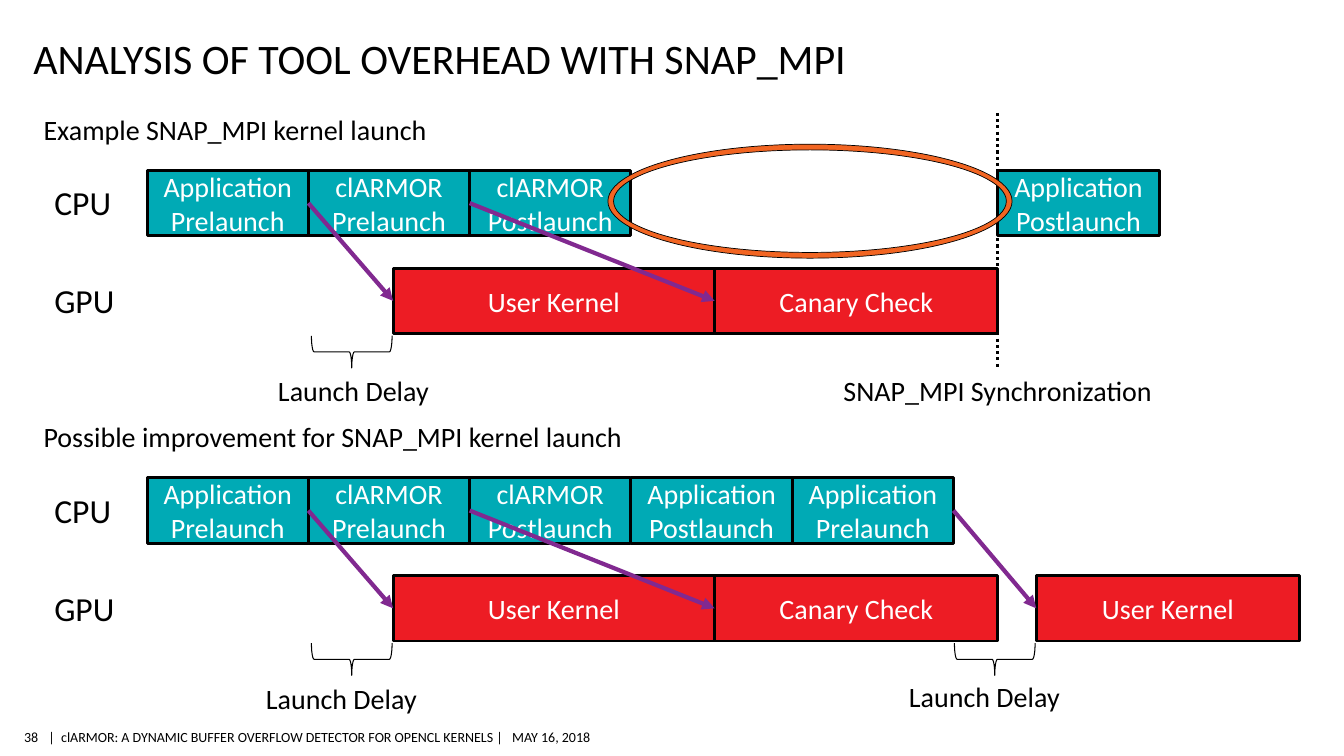
from lxml import etree
from pptx import Presentation
from pptx.dml.color import RGBColor
from pptx.enum import dml, shapes, text
from pptx.oxml import ns
from pptx.util import Pt

TEAL, RED, BLACK, WHITE = "00AAB5", "ED1C24", "000000", "FFFFFF"
PURPLE, ORANGE = "812990", "F26522"
LEFT, STEP, HIGH = 105.1, 115.2, 46.8  # CPU row start, box width, box height
DROP = 69.84  # from CPU row to GPU row
SYNC = 712.8
KERNELS = [("User Kernel", 280.8, 229.7), ("Canary Check", 510.5, 202.3)]
PRE, POST = "Application Prelaunch", "Application Postlaunch"
START = [PRE, "clARMOR Prelaunch", "clARMOR\nPostlaunch"]


def color(code):
    return RGBColor.from_string(code)


def put(obj, **vals):
    for name, val in vals.items():
        setattr(obj, name, val)


def write(frame, words, size, code=BLACK, align=text.PP_ALIGN.LEFT, after=0):
    frame.text = words
    for par in frame.paragraphs:
        put(par, alignment=align, space_after=Pt(after))
        put(par.font, name="Calibri", size=Pt(size))
        par.font.color.rgb = color(code)


def label(slide, words, x, y, w, h=31.7, size=20):
    frame = slide.shapes.add_textbox(Pt(x), Pt(y), Pt(w), Pt(h)).text_frame
    put(frame, word_wrap=True, auto_size=text.MSO_AUTO_SIZE.SHAPE_TO_FIT_TEXT)
    write(frame, words, size, after=6)


def note(slide, words, x, w, align):
    frame = slide.shapes.add_textbox(Pt(x), Pt(517), Pt(w), Pt(18.7)).text_frame
    put(frame, word_wrap=False, margin_left=0, margin_right=0,
        margin_top=Pt(2.9), margin_bottom=Pt(2.9),
        vertical_anchor=text.MSO_ANCHOR.MIDDLE)
    write(frame, words, 10, align=align)


def form(slide, kind, x, y, w, h, fill, line):
    item = slide.shapes.add_shape(kind, Pt(x), Pt(y), Pt(w), Pt(h))
    item.shadow.inherit = False
    if fill:
        item.fill.solid()
        item.fill.fore_color.rgb = color(fill)
    else:
        item.fill.background()
    item.line.color.rgb = color(BLACK)
    item.line.width = Pt(line)
    return item


def box(slide, words, x, y, w, fill):
    item = form(slide, shapes.MSO_SHAPE.RECTANGLE, x, y, w, HIGH, fill, 2)
    item.text_frame.vertical_anchor = text.MSO_ANCHOR.MIDDLE
    write(item.text_frame, words, 20, WHITE, text.PP_ALIGN.CENTER)
    return item


def brace(slide, mid, y):
    # Turned a quarter so that the tip points down
    item = form(slide, shapes.MSO_SHAPE.LEFT_BRACE, mid - 11.5, y - 28.8,
                23, 57.6, None, 0.75)
    item.rotation = 270


def rule(slide, x, y, end, code, width):
    item = slide.shapes.add_connector(shapes.MSO_CONNECTOR.STRAIGHT,
                                      Pt(x), Pt(y), Pt(x), Pt(end))
    item.line.color.rgb = color(code)
    item.line.width = Pt(width)
    etree.SubElement(item.line._get_or_add_ln().getparent(),
                     ns.qn("a:effectLst"))
    return item


def arrow(slide, source, goal):
    item = rule(slide, 0, 0, 0, PURPLE, 3)
    item.begin_connect(source, 3)
    item.end_connect(goal, 1)
    etree.SubElement(item.line._get_or_add_ln(), ns.qn("a:tailEnd"),
                     type="triangle")


def chart(slide, top, head, steps, kernels):
    """Draw one timeline; return its CPU and GPU boxes."""
    label(slide, head, 24, top - 45.2, 433)
    for i, name in enumerate(("CPU", "GPU")):
        label(slide, name, 31.7, top + 5 + i * DROP, 73.4, 36, 24)
    cpu = [box(slide, words, LEFT + i * STEP, top, STEP, TEAL)
           for i, words in enumerate(steps)]
    gpu = [box(slide, words, x, top + DROP, w, RED) for words, x, w in kernels]
    for i in range(2):
        arrow(slide, cpu[i], gpu[i])
    brace(slide, 251.3, top + 129.6)
    return cpu, gpu


def main():
    deck = Presentation()
    put(deck, slide_width=Pt(960), slide_height=Pt(540))
    slide = deck.slides.add_slide(deck.slide_layouts[5])

    # Title and footer
    title = slide.shapes.title
    put(title, left=Pt(23.8), top=Pt(21.6), width=Pt(820.8), height=Pt(37.4))
    put(title.text_frame, margin_left=Pt(0), margin_right=Pt(0),
        margin_top=Pt(3.6), margin_bottom=Pt(0),
        vertical_anchor=text.MSO_ANCHOR.BOTTOM,
        auto_size=text.MSO_AUTO_SIZE.NONE)
    write(title.text_frame, "ANALYSIS OF TOOL OVERHEAD WITH SNAP_MPI", 30)
    note(slide, "38", 15.8, 11.5, text.PP_ALIGN.RIGHT)
    note(slide, "|  clARMOR: A DYNAMIC BUFFER OVERFLOW DETECTOR FOR OPENCL "
         "KERNELS |   MAY 16, 2018", 34.6, 396, text.PP_ALIGN.LEFT)

    # Current launch, with the idle CPU time ringed
    chart(slide, 121.7, "Example SNAP_MPI kernel launch", START, KERNELS)
    box(slide, POST, SYNC, 121.7, STEP, TEAL)
    label(slide, "Launch Delay", 191.5, 263.5, 126.7)
    sync = rule(slide, SYNC, 80.6, 262, BLACK, 2.25)
    sync.line.dash_style = dml.MSO_LINE.ROUND_DOT
    label(slide, "SNAP_MPI Synchronization", 595.4, 263.5, 236.2)
    ring = form(slide, shapes.MSO_SHAPE.DONUT, 434.2, 103, 288.7, 81.4,
                ORANGE, 0.5)
    ring.adjustments[0] = 0.05

    # Improved launch
    cpu, gpu = chart(slide, 341.3,
                     "Possible improvement for SNAP_MPI kernel launch",
                     START + [POST, PRE],
                     KERNELS + [("User Kernel", 740.2, 187.9)])
    arrow(slide, cpu[-1], gpu[-1])
    brace(slide, 710.6, 470.9)
    label(slide, "Launch Delay", 182.9, 483.1, 126.7)
    label(slide, "Launch Delay", 642.2, 481.7, 126.7)

    deck.save("out.pptx")


if __name__ == "__main__":
    main()
